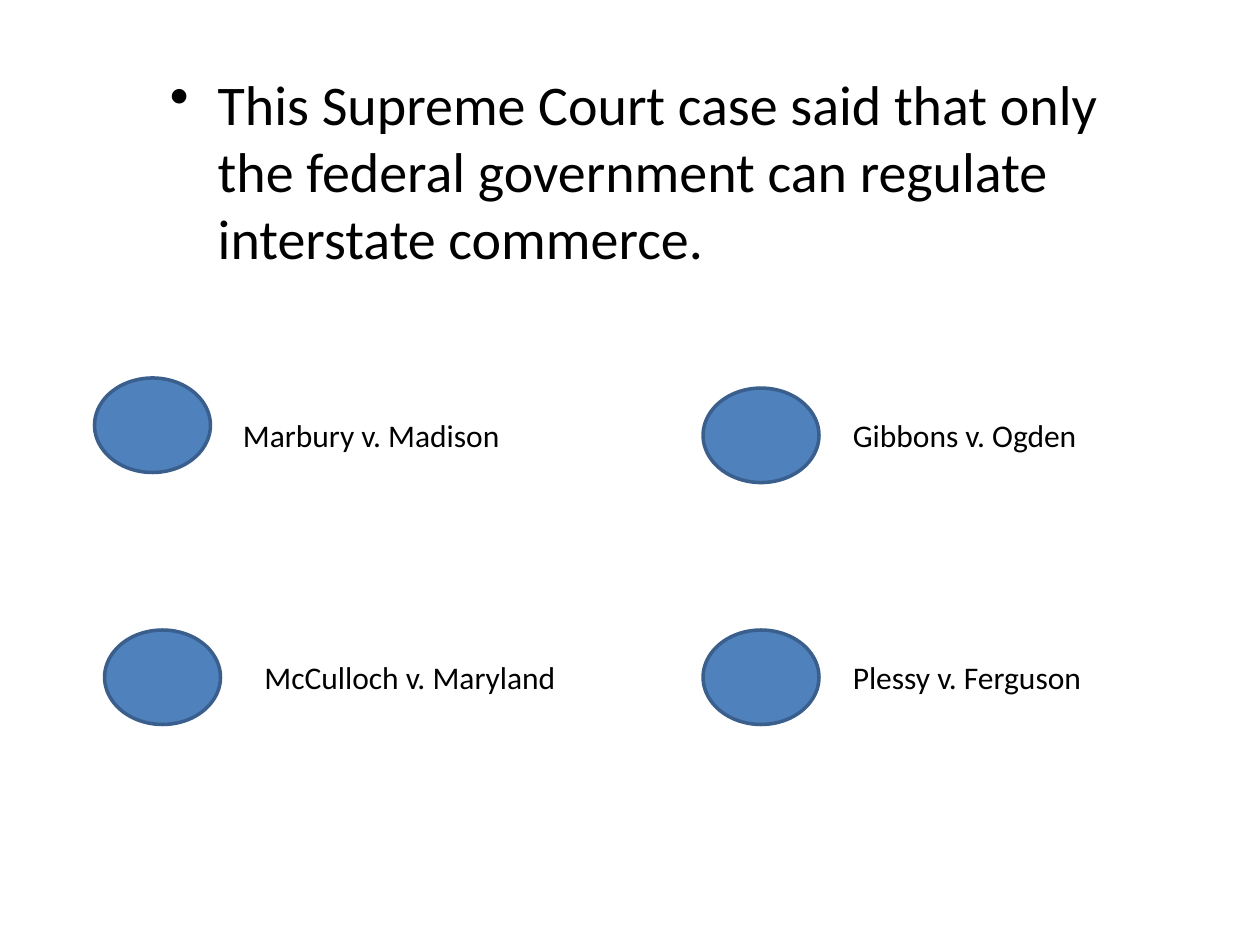
from dataclasses import dataclass

from pptx import Presentation
from pptx.dml.color import RGBColor
from pptx.enum.shapes import MSO_SHAPE as Shape
from pptx.enum.text import MSO_AUTO_SIZE as AutoSize
from pptx.oxml.ns import qn
from pptx.util import Inches, Pt


@dataclass(frozen=True)
class Theme:
    font: str = "Calibri"
    text: RGBColor = RGBColor(0x00, 0x00, 0x00)
    fill: RGBColor = RGBColor(0x4F, 0x81, 0xBD)
    outline: RGBColor = RGBColor(0x3A, 0x5F, 0x8C)
    question_size: int = 32
    answer_size: int = 18


theme = Theme()


def add_text(page, text, left, top, width, height, size):
    box = page.shapes.add_textbox(
        Inches(left), Inches(top), Inches(width), Inches(height))
    box.text_frame.word_wrap = True
    para = box.text_frame.paragraphs[0]
    span = para.add_run()
    span.text = text
    span.font.color.rgb = theme.text
    for name, value in {"name": theme.font, "size": Pt(size)}.items():
        setattr(span.font, name, value)
    return box, para


deck = Presentation()
deck.slide_width, deck.slide_height = Inches(10), Inches(7.5)
page = deck.slides.add_slide(deck.slide_layouts[6])

# Question with a hanging bullet
box, para = add_text(
    page,
    "This Supreme Court case said that only the federal government "
    "can regulate interstate commerce.",
    1.25, 0.5, 7.67, 2.58, theme.question_size)
para.space_before = Pt(theme.question_size * 0.2)
properties = para._p.get_or_add_pPr()
properties.set("marL", str(Inches(0.38)))
properties.set("indent", str(-Inches(0.38)))
bullet = properties.makeelement(qn("a:buChar"), {"char": "•"})
properties.append(bullet)

# Answers: text, oval left and top, label left, top and width
answers = [
    ("Marbury v. Madison", 0.75, 3, 1.83, 3.25, 2.58),
    ("McCulloch v. Maryland", 0.83, 5, 2, 5.17, 2.83),
    ("Gibbons v. Ogden", 5.58, 3.08, 6.67, 3.25, 2.25),
    ("Plessy v. Ferguson", 5.58, 5, 6.67, 5.17, 2.17),
]
for text, oval_left, oval_top, left, top, width in answers:
    oval = page.shapes.add_shape(
        Shape.OVAL, Inches(oval_left), Inches(oval_top),
        Inches(0.92), Inches(0.75))
    oval.shadow.inherit = False
    oval.fill.solid()
    oval.fill.fore_color.rgb = theme.fill
    oval.line.color.rgb = theme.outline
    oval.line.width = Pt(2)

    label, para = add_text(
        page, text, left, top, width, 0.4, theme.answer_size)
    label.text_frame.auto_size = AutoSize.SHAPE_TO_FIT_TEXT

deck.save("out.pptx")
